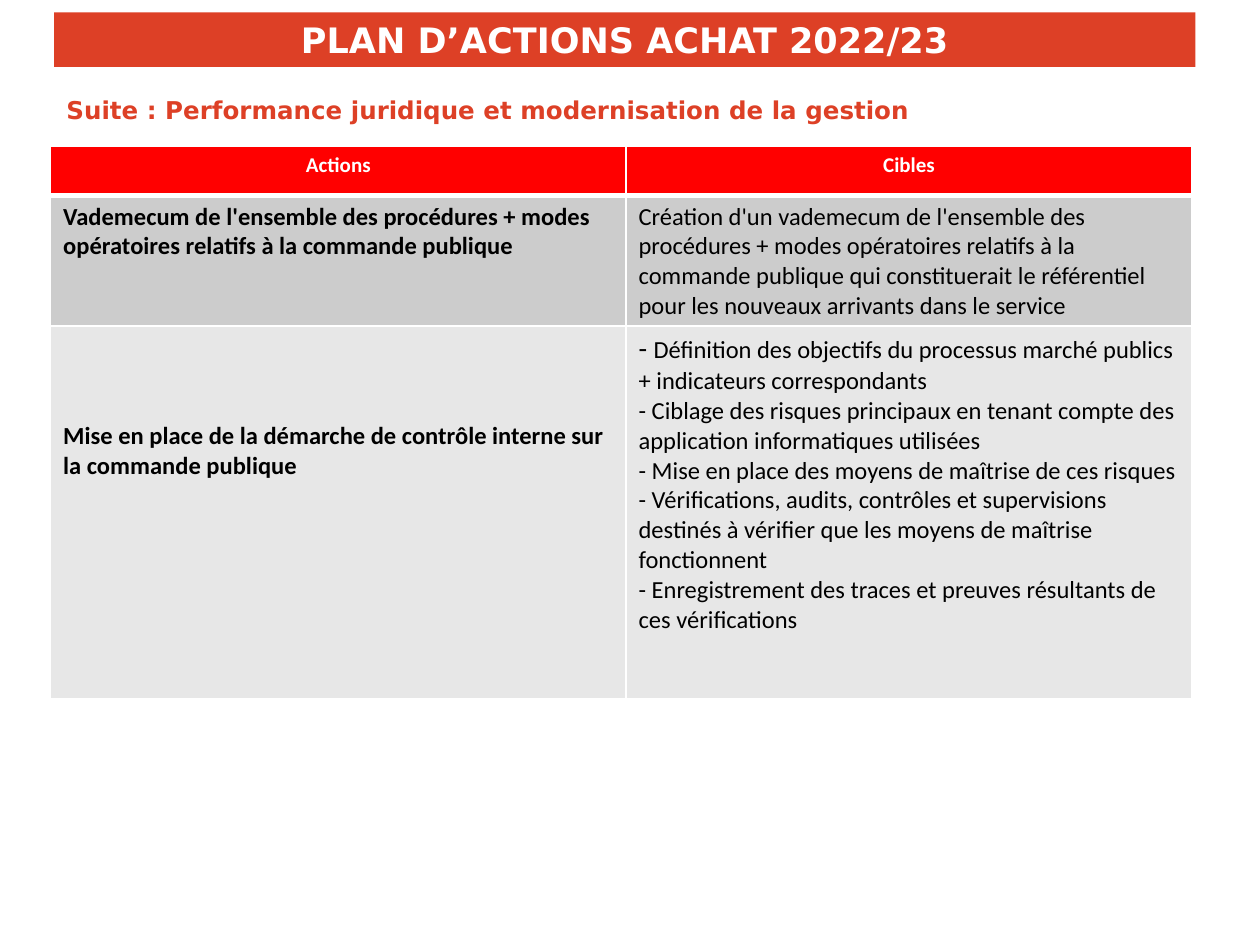
from dataclasses import dataclass

from pptx import Presentation
from pptx import util as u
from pptx.dml.color import RGBColor
from pptx.enum import text
from pptx.oxml import parse_xml
from pptx.oxml.ns import nsdecls


@dataclass(frozen=True)
class Theme:
    brand: str = "DD4026"
    header: str = "FF0000"
    bands: tuple = ("CCCCCC", "E7E7E7")
    light: str = "FFFFFF"
    dark: str = "000000"
    heading_font: str = "DejaVu Sans"
    body_font: str = "Calibri"
    title_size: int = 20
    body_size: int = 14
    header_size: int = 12
    first_dash_size: int = 16


THEME = Theme()
HEADERS = ("Actions", "Cibles")
PLAN = (
    (
        "Vademecum de l'ensemble des procédures + modes opératoires relatifs à la commande publique",
        ["Création d'un vademecum de l'ensemble des procédures + modes opératoires relatifs à la "
         "commande publique qui constituerait le référentiel pour les nouveaux arrivants dans le service"],
    ),
    (
        "Mise en place de la démarche de contrôle interne sur la commande publique",
        ["- Définition des objectifs du processus marché publics + indicateurs correspondants",
         "- Ciblage des risques principaux en tenant compte des application informatiques utilisées",
         "- Mise en place des moyens de maîtrise de ces risques",
         "- Vérifications, audits, contrôles et supervisions destinés à vérifier que les moyens de "
         "maîtrise fonctionnent",
         "- Enregistrement des traces et preuves résultants de ces vérifications"],
    ),
)


def apply(target, formats):
    for attribute, value in formats.items():
        setattr(target, attribute, value)


def paint(fill, color):
    fill.solid()
    fill.fore_color.rgb = RGBColor.from_string(color)


def add_run(paragraph, words, color, size, font, bold):
    run = paragraph.add_run()
    run.text = words
    apply(run.font, {"name": font, "size": u.Pt(size), "bold": bold})
    run.font.color.rgb = RGBColor.from_string(color)


def place_banner(title, box, words):
    apply(title, dict(zip(("left", "top", "width", "height"), box)))
    paint(title.fill, THEME.brand)
    apply(title.text_frame, {
        "word_wrap": True,
        "auto_size": text.MSO_AUTO_SIZE.NONE,
        "vertical_anchor": text.MSO_ANCHOR.MIDDLE,
    })
    paragraph = title.text_frame.paragraphs[0]
    paragraph.alignment = text.PP_ALIGN.CENTER
    add_run(paragraph, words, THEME.light, THEME.title_size, THEME.heading_font, True)


def place_subtitle(slide, box, words):
    frame = slide.shapes.add_textbox(*box).text_frame
    apply(frame, {"word_wrap": True, "vertical_anchor": text.MSO_ANCHOR.MIDDLE})
    add_run(frame.paragraphs[0], words, THEME.brand, THEME.body_size, THEME.heading_font, True)


def style_cell(cell, color, top_width, bottom_width):
    edges = {"lnL": 1, "lnR": 1, "lnT": top_width, "lnB": bottom_width}
    properties = cell._tc.get_or_add_tcPr()
    for edge, width in edges.items():
        properties.append(parse_xml(
            f'<a:{edge} {nsdecls("a")} w="{u.Pt(width)}"><a:solidFill>'
            f'<a:srgbClr val="{THEME.light}"/></a:solidFill></a:{edge}>'))
    paint(cell.fill, color)


def fill_header(cell, words):
    style_cell(cell, THEME.header, 1, 3)
    paragraph = cell.text_frame.paragraphs[0]
    paragraph.alignment = text.PP_ALIGN.CENTER
    add_run(paragraph, words, THEME.light, THEME.header_size, THEME.body_font, True)


def fill_body(cell, lines, band, top_width, bold):
    style_cell(cell, band, top_width, 1)
    for index, line in enumerate(lines):
        frame = cell.text_frame
        paragraph = frame.add_paragraph() if index else frame.paragraphs[0]
        if index == 0 and line.startswith("- "):
            add_run(paragraph, "- ", THEME.dark, THEME.first_dash_size, THEME.body_font, bold)
            line = line[2:]
        add_run(paragraph, line, THEME.dark, THEME.body_size, THEME.body_font, bold)


def place_plan(slide, box, column_widths, row_heights):
    plan = slide.shapes.add_table(len(PLAN) + 1, len(HEADERS), *box).table
    for column, width in zip(plan.columns, column_widths):
        column.width = u.Cm(width)
    for row, height in zip(plan.rows, row_heights):
        row.height = u.Cm(height)
    for index, heading in enumerate(HEADERS):
        fill_header(plan.cell(0, index), heading)
    for index, (action, targets) in enumerate(PLAN, start=1):
        band = THEME.bands[index - 1]
        top_width = 3 if index == 1 else 1
        fill_body(plan.cell(index, 0), [action], band, top_width, True)
        fill_body(plan.cell(index, 1), targets, band, top_width, False)
    plan.cell(len(PLAN), 0).margin_top = u.Cm(1.93)


def main():
    deck = Presentation()
    apply(deck, {"slide_width": u.Cm(25.4), "slide_height": u.Cm(19.05)})
    slide = deck.slides.add_slide(deck.slide_layouts[5])
    place_banner(slide.shapes.title, (u.Cm(1.09), u.Cm(0.25), u.Cm(23.01), u.Cm(1.1)),
                 "PLAN D’ACTIONS ACHAT 2022/23")
    place_subtitle(slide, (u.Cm(1.09), u.Cm(1.72), u.Cm(23.01), u.Cm(1)),
                   "Suite : Performance juridique et modernisation de la gestion")
    place_plan(slide, (u.Cm(1.02), u.Cm(2.95), u.Cm(23.01), u.Cm(11.13)),
               (11.6, 11.41), (0.99, 2.62, 7.52))
    deck.save("out.pptx")


if __name__ == "__main__":
    main()
